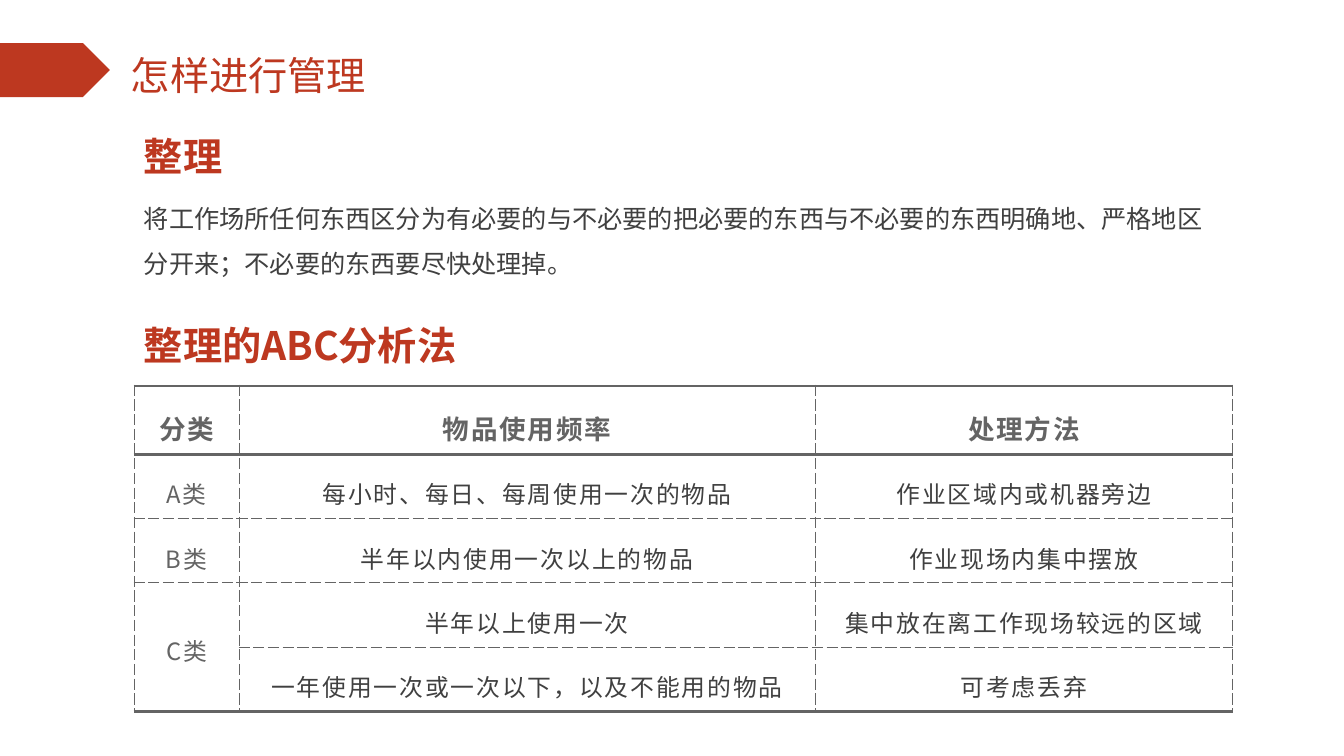
from lxml.etree import SubElement
from pptx import Presentation
from pptx.dml.color import RGBColor
from pptx.enum.shapes import MSO_SHAPE
from pptx.enum.text import MSO_ANCHOR, PP_ALIGN
from pptx.oxml.ns import qn
from pptx.util import Pt

FONT = "Noto Sans CJK SC"
RED, DARK, GRAY, WHITE = "BD3820", "404040", "646464", "FFFFFF"
PX_PER_INCH = 100.8

# text, box (left, top, width, height), size, colour, bold, alignment, anchor, line spacing
TEXTS = [
    ("怎样进行管理", (121, 46, 309, 57), 28, RED, False,
     PP_ALIGN.JUSTIFY, MSO_ANCHOR.TOP, 1),
    ("整理", (134, 134, 672, 44), 28, RED, True,
     PP_ALIGN.LEFT, MSO_ANCHOR.MIDDLE, 1),
    ("将工作场所任何东西区分为有必要的与不必要的把必要的东西与不必要的东西明确地、严格地区"
     "分开来；不必要的东西要尽快处理掉。", (134, 183, 1086, 97), 18, DARK, False,
     PP_ALIGN.LEFT, MSO_ANCHOR.TOP, 1.5),
    ("整理的ABC分析法", (134, 311, 438, 67), 28, RED, True,
     PP_ALIGN.LEFT, MSO_ANCHOR.MIDDLE, 1),
]
ARROW_BOX = (0, 43, 110, 54)

TABLE_ROWS = [
    ("分类", "物品使用频率", "处理方法"),
    ("A类", "每小时、每日、每周使用一次的物品", "作业区域内或机器旁边"),
    ("B类", "半年以内使用一次以上的物品", "作业现场内集中摆放"),
    ("C类", "半年以上使用一次", "集中放在离工作现场较远的区域"),
    ("", "一年使用一次或一次以下，以及不能用的物品", "可考虑丢弃"),
]
TABLE_LEFT, TABLE_TOP = 134, 386
COLUMN_WIDTHS = [105, 576, 418]
ROW_HEIGHTS = [68, 64, 64, 64, 64]
CELL_MARGIN_X, CELL_MARGIN_Y = 24, 15
MERGED_ROWS = (3, 4)


def px(length):
    return round(length * 914400 / PX_PER_INCH)


def color(value):
    return RGBColor.from_string(value)


def write(frame, text, size, shade, bold, align, spacing):
    para = frame.paragraphs[0]
    para.alignment = align
    para.line_spacing = spacing
    span = para.add_run()
    span.text = text
    font = span.font
    font.size, font.bold, font.name = Pt(size), bold, FONT
    font.color.rgb = color(shade)
    properties = font._element
    SubElement(properties, qn("a:ea"), typeface=FONT)
    return properties


def add_border(cell, side, thick):
    """Side is L, R, T or B; a thick border is solid, a thin one dashed."""
    width = Pt(2.25 if thick else 0.75)
    line = SubElement(cell._tc.get_or_add_tcPr(), qn(f"a:ln{side}"), w=str(width))
    fill = SubElement(line, qn("a:solidFill"))
    SubElement(fill, qn("a:srgbClr"), val=GRAY)
    SubElement(line, qn("a:prstDash"), val="solid" if thick else "sysDash")


def add_text(page, text, box, size, shade, bold, align, anchor, spacing):
    frame = page.shapes.add_textbox(*map(px, box)).text_frame
    frame.word_wrap = True
    frame.vertical_anchor = anchor
    write(frame, text, size, shade, bold, align, spacing)


def add_arrow(page):
    arrow = page.shapes.add_shape(MSO_SHAPE.PENTAGON, *map(px, ARROW_BOX))
    arrow.shadow.inherit = False
    arrow.fill.solid()
    arrow.fill.fore_color.rgb = color(RED)
    arrow.line.fill.background()


def fill_cell(cell, row, column, text):
    last = len(TABLE_ROWS) - 1
    ends_table = row == last or (row, column) == (MERGED_ROWS[0], 0)
    thick_sides = {"T": row <= 1, "B": row == 0 or ends_table}
    for side in "LRTB":
        add_border(cell, side, thick_sides.get(side, False))
    cell.fill.solid()
    cell.fill.fore_color.rgb = color(WHITE)
    cell.vertical_anchor = MSO_ANCHOR.MIDDLE
    cell.margin_left = cell.margin_right = px(CELL_MARGIN_X)
    cell.margin_top = cell.margin_bottom = px(CELL_MARGIN_Y)
    if text:
        header = row == 0
        shade = GRAY if header or column == 0 else DARK
        properties = write(cell.text_frame, text, 19 if header else 17, shade,
                           header, PP_ALIGN.CENTER, 1.2)
        properties.set("spc", "130")


def add_analysis_table(page):
    table = page.shapes.add_table(
        len(ROW_HEIGHTS), len(COLUMN_WIDTHS), px(TABLE_LEFT), px(TABLE_TOP),
        px(sum(COLUMN_WIDTHS)), px(sum(ROW_HEIGHTS))).table
    table.first_row = table.horz_banding = False
    for column, width in zip(table.columns, COLUMN_WIDTHS):
        column.width = px(width)
    for row, height in zip(table.rows, ROW_HEIGHTS):
        row.height = px(height)
    first, last = MERGED_ROWS
    table.cell(first, 0).merge(table.cell(last, 0))
    for row, texts in enumerate(TABLE_ROWS):
        for column, text in enumerate(texts):
            fill_cell(table.cell(row, column), row, column, text)


def main():
    deck = Presentation()
    deck.slide_width, deck.slide_height = px(1344), px(756)
    page = deck.slides.add_slide(deck.slide_layouts[6])
    add_arrow(page)
    for item in TEXTS:
        add_text(page, *item)
    add_analysis_table(page)
    deck.save("out.pptx")


if __name__ == "__main__":
    main()
